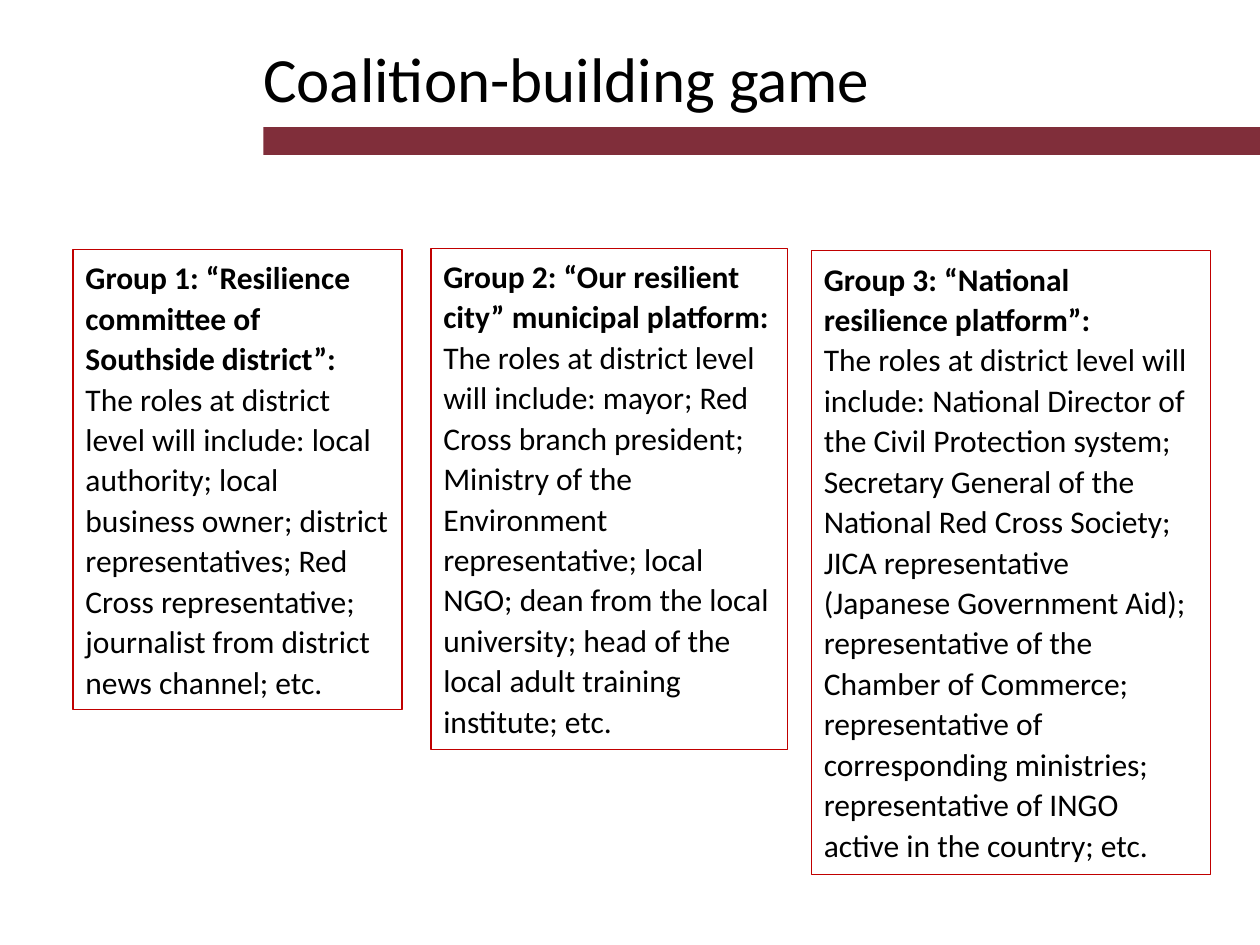
from pptx import Presentation
from pptx.dml.color import RGBColor
from pptx.enum.shapes import MSO_SHAPE as Shape
from pptx.enum.text import MSO_ANCHOR as Anchor, MSO_AUTO_SIZE as AutoSize, PP_ALIGN as Align
from pptx.util import Inches, Pt

FONT = "Calibri"
BLACK = RGBColor(0x00, 0x00, 0x00)
MAROON = RGBColor(0x80, 0x2E, 0x3A)
RED = RGBColor(0xC0, 0x00, 0x00)

TITLE = "Coalition-building game"
ROLES = "The roles at district level will include: "

# Each group: box (left, top, width, height), heading, roles
GROUPS = [
    ((0.58, 1.98, 2.61, 3.65),
     "Group 1: “Resilience committee of Southside district”:",
     "local authority; local business owner; district representatives; "
     "Red Cross representative; journalist from district news channel; etc."),
    ((3.42, 1.97, 2.83, 3.98),
     "Group 2: “Our resilient city” municipal platform:",
     "mayor; Red Cross branch president; Ministry of the Environment "
     "representative; local NGO; dean from the local university; "
     "head of the local adult training institute; etc."),
    ((6.44, 1.99, 3.17, 4.95),
     "Group 3: “National resilience platform”:",
     "National Director of the Civil Protection system; Secretary General of "
     "the National Red Cross Society; JICA representative (Japanese Government "
     "Aid); representative of the Chamber of Commerce; representative of "
     "corresponding ministries; representative of INGO active in the country; etc."),
]


def add_rectangle(slide, box, fill=None, line=None):
    shape = slide.shapes.add_shape(Shape.RECTANGLE, *map(Inches, box))
    shape.shadow.inherit = False
    if fill is None:
        shape.fill.background()
    else:
        shape.fill.solid()
        shape.fill.fore_color.rgb = fill
    if line is None:
        shape.line.fill.background()
    else:
        shape.line.color.rgb = line
        shape.line.width = Pt(0.75)
    return shape


def write_text(paragraph, text, size=18, bold=False, spacing=None):
    paragraph.alignment = Align.LEFT
    paragraph.line_spacing = spacing
    run = paragraph.add_run()
    run.text = text
    run.font.name = FONT
    run.font.size = Pt(size)
    run.font.bold = bold
    run.font.color.rgb = BLACK


presentation = Presentation()
presentation.slide_width, presentation.slide_height = Inches(10), Inches(7.5)
slide = presentation.slides.add_slide(presentation.slide_layouts[6])

# Title and the bar under it
title = slide.shapes.add_textbox(*map(Inches, (1.99, 0, 8.01, 1.23))).text_frame
title.word_wrap = True
title.vertical_anchor = Anchor.MIDDLE
write_text(title.paragraphs[0], TITLE, size=36)
add_rectangle(slide, (2.09, 1.01, 7.91, 0.22), fill=MAROON)

# Group boxes
for box, heading, roles in GROUPS:
    frame = add_rectangle(slide, box, line=RED).text_frame
    frame.word_wrap = True
    frame.auto_size = AutoSize.SHAPE_TO_FIT_TEXT
    frame.vertical_anchor = Anchor.TOP
    write_text(frame.paragraphs[0], heading, bold=True, spacing=1.07)
    write_text(frame.add_paragraph(), ROLES + roles, spacing=1.07)

presentation.save("out.pptx")
